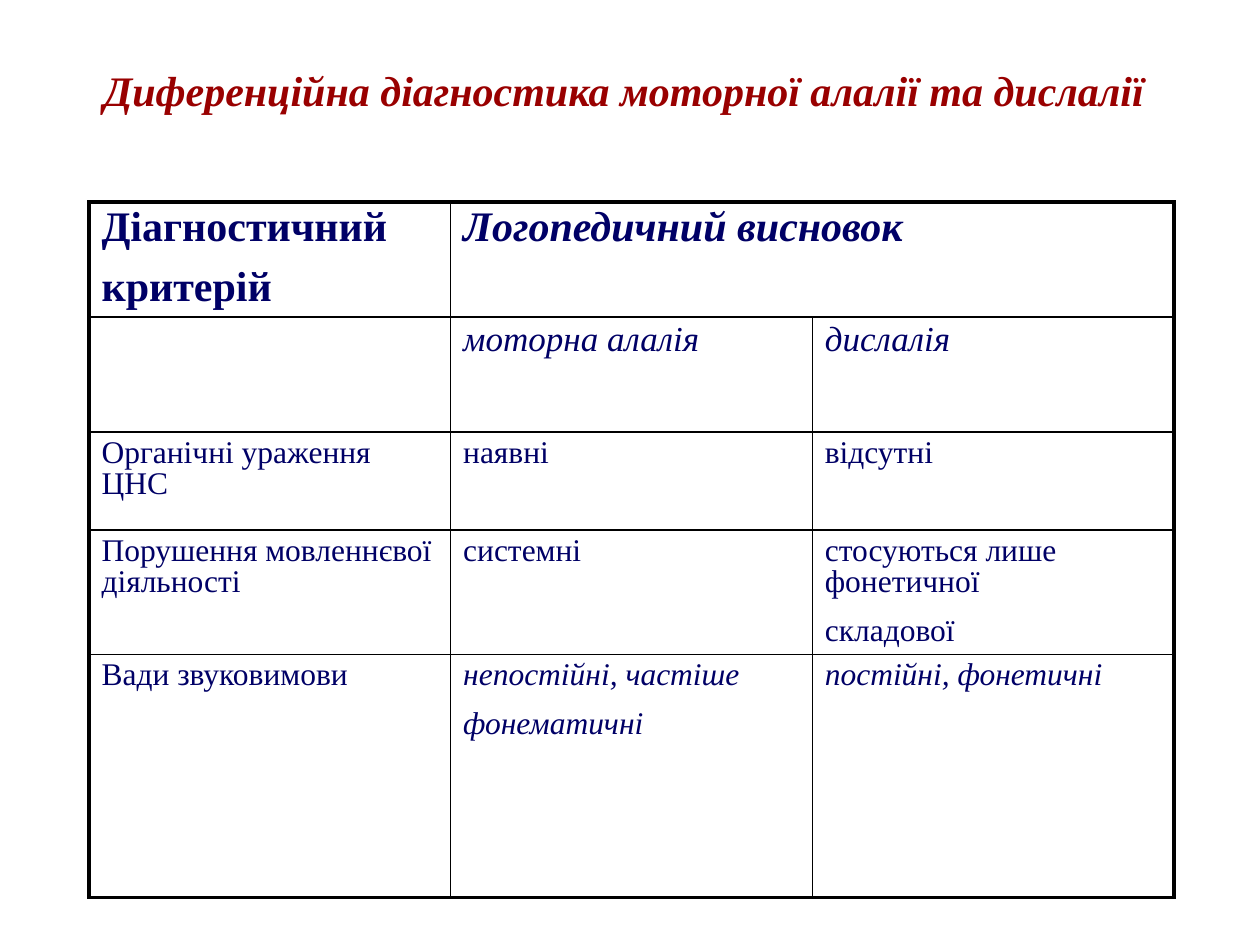
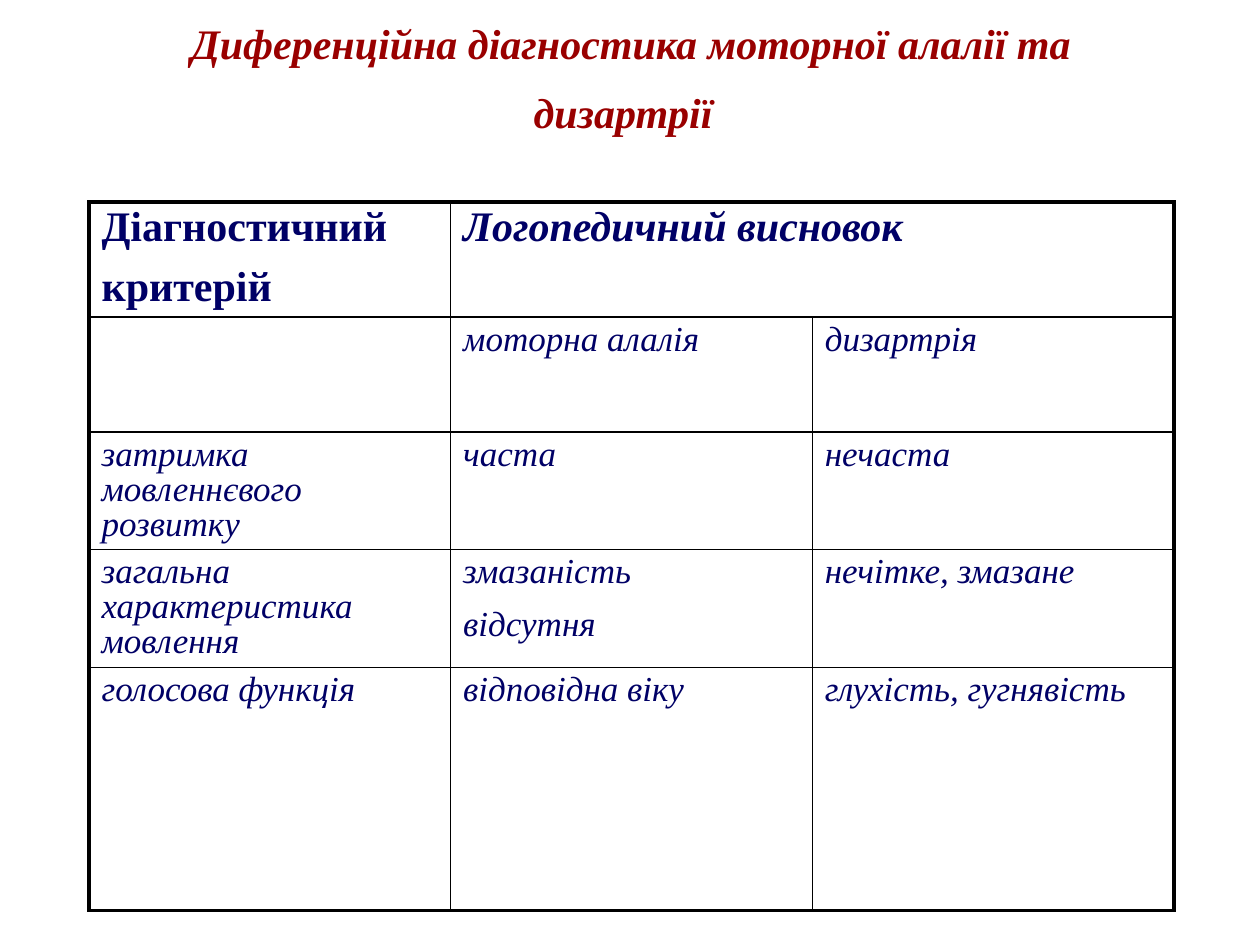
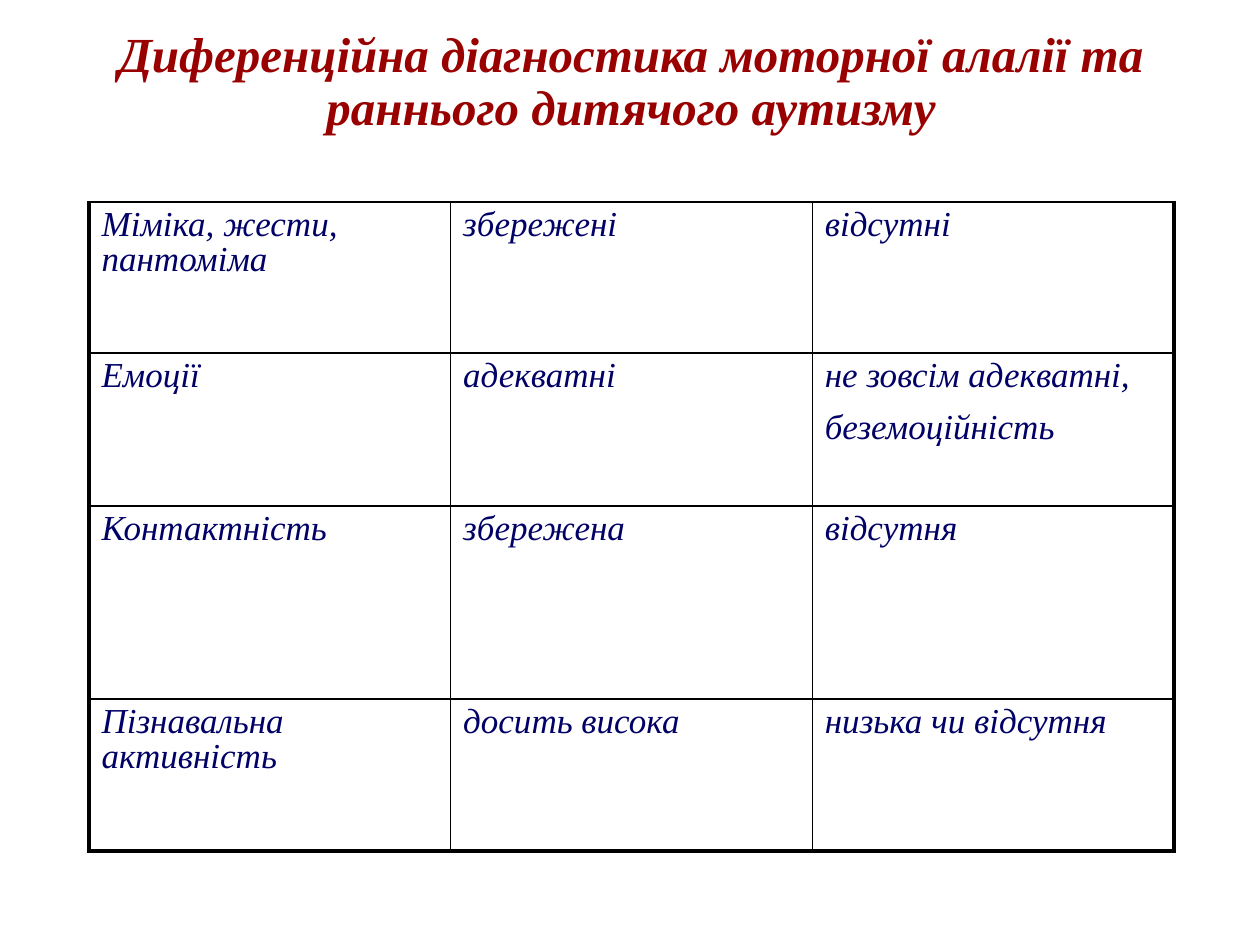
from pptx import Presentation
from pptx.dml.color import RGBColor
from pptx.enum.text import MSO_ANCHOR, MSO_AUTO_SIZE, PP_ALIGN
from pptx.oxml import parse_xml
from pptx.oxml.ns import nsdecls
from pptx.util import Pt

PX = 914400 // 126
FONT = "Times New Roman"
INK = {"title": "990000", "cell": "000066", "rule": "000000"}
THICK, THIN = 2.25, 1

TITLE_BOX = (91, 16, 1080, 135)
TABLE_BOX = (89, 202, 1085)  # left, top, width

# Text styles: size, bold, italic
HEAD = (24, True, False)
HEAD_IT = (24, True, True)
PLAIN = (18, False, False)
SLANT = (18, False, True)
LARGE = (20, False, True)


def head(name):
    """The two heading rows that name the compared disorders."""
    return [
        (115, (HEAD, HEAD_IT, HEAD_IT),
         ("Діагностичний\nкритерій", "Логопедичний висновок", "")),
        (115, (LARGE,) * 3, ("", "моторна алалія", name)),
    ]


SLIDES = [
    dict(
        title="Диференційна діагностика моторної алалії та дислалії",
        size=24, align=PP_ALIGN.LEFT, tail=True, headed=True,
        rows=head("дислалія") + [
            (98, (PLAIN,) * 3,
             ("Органічні ураження ЦНС", "наявні", "відсутні")),
            (124, (PLAIN,) * 3,
             ("Порушення мовленнєвої діяльності", "системні",
              "стосуються лише фонетичної\nскладової")),
            (243, (PLAIN, SLANT, SLANT),
             ("Вади звуковимови", "непостійні, частіше\nфонематичні",
              "постійні, фонетичні")),
        ]),
    dict(
        title="Диференційна діагностика моторної алалії та дизартрії",
        size=24, align=PP_ALIGN.CENTER, tail=True, headed=True,
        rows=head("дизартрія") + [
            (117, (LARGE,) * 3,
             ("затримка мовленнєвого розвитку", "часта", "нечаста")),
            (118, (LARGE,) * 3,
             ("загальна характеристика мовлення", "змазаність\nвідсутня",
              "нечітке, змазане")),
            (243, (LARGE,) * 3,
             ("голосова функція", "відповідна віку", "глухість, гугнявість")),
        ]),
    dict(
        title="Диференційна діагностика моторної алалії та раннього "
              "дитячого аутизму",
        size=28, align=PP_ALIGN.CENTER, tail=False, headed=False,
        rows=[
            (151, (LARGE,) * 3,
             ("Міміка, жести, пантоміма", "збережені", "відсутні")),
            (153, (LARGE,) * 3,
             ("Емоції", "адекватні", "не зовсім адекватні,\nбеземоційність")),
            (193, (LARGE,) * 3, ("Контактність", "збережена", "відсутня")),
            (152, (LARGE,) * 3,
             ("Пізнавальна активність", "досить висока",
              "низька чи відсутня")),
        ]),
]


def style(run, size, bold, slant, ink):
    font = run.font
    font.name, font.size = FONT, Pt(size)
    font.bold, font.italic = bold, slant
    font.color.rgb = RGBColor.from_string(INK[ink])


def add_title(slide, box, text, size, align, tail):
    shape = slide.shapes.title
    shape.left, shape.top, shape.width, shape.height = (v * PX for v in box)
    frame = shape.text_frame
    frame.text = text
    frame.word_wrap = True
    frame.auto_size = MSO_AUTO_SIZE.NONE
    frame.vertical_anchor = MSO_ANCHOR.MIDDLE
    para = frame.paragraphs[0]
    para.alignment, para.line_spacing = align, 0.9
    style(para.runs[0], size, True, True, "title")
    if tail:  # a tall closing space sets the height of the last line
        run = para.add_run()
        run.text = " "
        run.font.name, run.font.size = "Calibri", Pt(40)


def add_rules(cell, widths):
    """Draw the cell borders: left, right, top, bottom, in points."""
    props = cell._tc.get_or_add_tcPr()
    for spot, (side, width) in enumerate(zip("LRTB", widths)):
        props.insert(spot, parse_xml(
            f'<a:ln{side} {nsdecls("a")} w="{Pt(width)}"><a:solidFill>'
            f'<a:srgbClr val="{INK["rule"]}"/></a:solidFill></a:ln{side}>'))


def fill_cell(cell, text, look):
    cell.fill.background()
    frame = cell.text_frame
    frame.text = text
    for order, para in enumerate(frame.paragraphs):
        para.line_spacing = 0.9
        para.space_before = Pt(10 if order else 0)
        for run in para.runs:
            style(run, *look, "cell")


def add_grid(slide, box, rows, headed):
    left, top, width = box
    high = sum(row[0] for row in rows)
    cols = len(rows[0][2])
    table = slide.shapes.add_table(
        len(rows), cols, left * PX, top * PX, width * PX, high * PX).table
    table.first_row = table.horz_banding = False
    for col in table.columns:
        col.width = width * PX // cols
    last = len(rows) - 1
    for r, (height, looks, texts) in enumerate(rows):
        table.rows[r].height = height * PX
        for c, (look, text) in enumerate(zip(looks, texts)):
            cell = table.cell(r, c)
            fill_cell(cell, text, look)
            edges = (c == 0, c == cols - 1 or (headed and r == 0 and c == 1),
                     headed and r == 0, r == last)
            add_rules(cell, [THICK if edge else THIN for edge in edges])
    if headed:
        table.cell(0, 1).merge(table.cell(0, cols - 1))


def main():
    deck = Presentation()
    deck.slide_width, deck.slide_height = 1260 * PX, 945 * PX
    for page in SLIDES:
        slide = deck.slides.add_slide(deck.slide_layouts[5])
        add_title(slide, TITLE_BOX, page["title"], page["size"],
                  page["align"], page["tail"])
        add_grid(slide, TABLE_BOX, page["rows"], page["headed"])
    deck.save("out.pptx")


if __name__ == "__main__":
    main()
